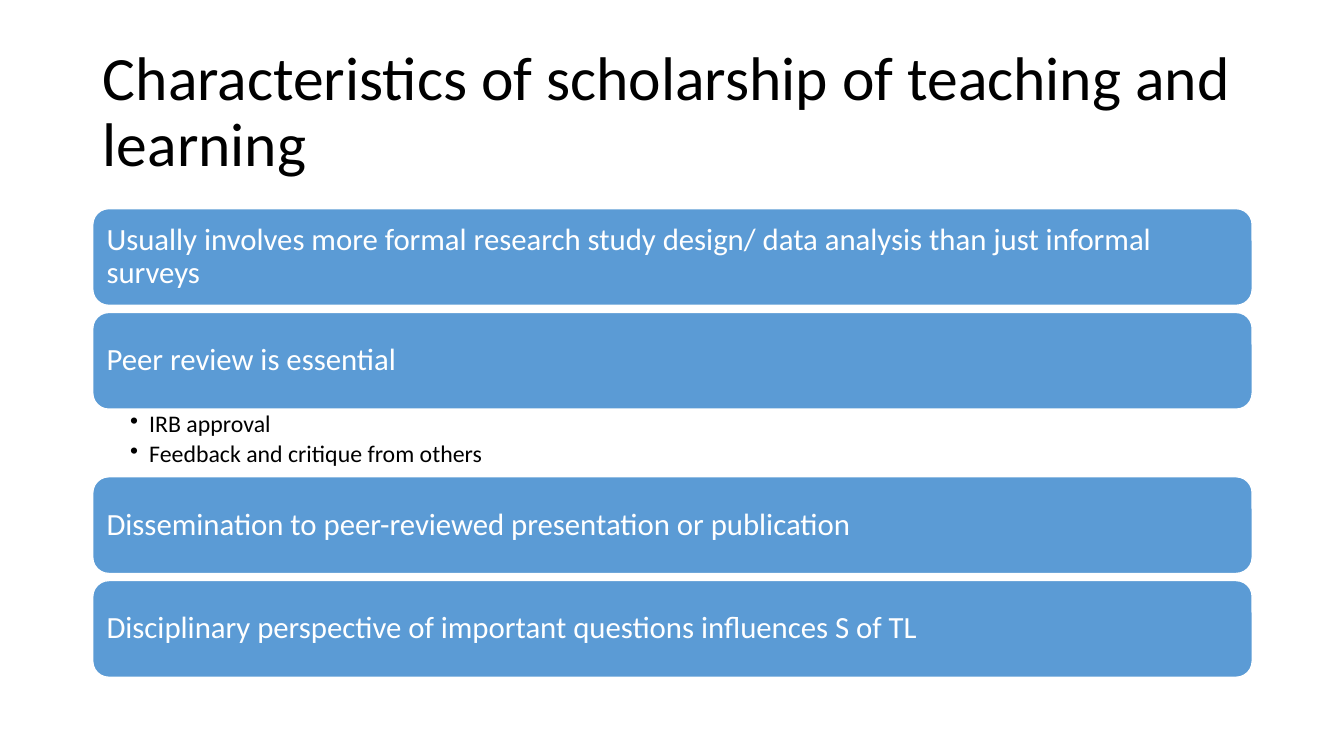
from pptx import Presentation
from pptx.dml.color import RGBColor
from pptx.enum.shapes import MSO_SHAPE
from pptx.enum.text import MSO_ANCHOR, MSO_AUTO_SIZE, PP_ALIGN
from pptx.oxml.ns import qn
from pptx.util import Inches, Pt
from lxml import etree


def rgb(value):
    return RGBColor.from_string(value)


def style(p, size, color):
    p.alignment = PP_ALIGN.LEFT
    p.line_spacing = 0.9
    p.font.name = "Calibri"
    p.font.size = Pt(size)
    p.font.color.rgb = rgb(color)


LEFT, WIDTH = Inches(0.92), Inches(11.5)
BAR_HEIGHT = 0.96
BAR_STEP = 1.03
DETAIL_HEIGHT = 0.65

bars = [
    ("Usually involves more formal research study design/ data analysis than just informal surveys", []),
    ("Peer review is essential", ["IRB approval", "Feedback and critique from others"]),
    ("Dissemination to peer-reviewed presentation or publication", []),
    ("Disciplinary perspective of important questions influences S of TL", []),
]

prs = Presentation()
prs.slide_width = Inches(13.33)
prs.slide_height = Inches(7.5)
s = prs.slides.add_slide(prs.slide_layouts[5])

title = s.shapes.title
title.left, title.top, title.width, title.height = LEFT, Inches(0.4), WIDTH, Inches(1.45)
tf = title.text_frame
tf.text = "Characteristics of scholarship of teaching and learning"
tf.vertical_anchor = MSO_ANCHOR.MIDDLE
tf.auto_size = MSO_AUTO_SIZE.NONE
style(tf.paragraphs[0], 44, "000000")

top = 2.07
for heading, details in bars:
    sp = s.shapes.add_shape(MSO_SHAPE.ROUNDED_RECTANGLE, LEFT, Inches(top), WIDTH, Inches(BAR_HEIGHT))
    sp.shadow.inherit = False
    sp.fill.solid()
    sp.fill.fore_color.rgb = rgb("5B9BD5")
    sp.line.color.rgb = rgb("FFFFFF")
    sp.line.width = Pt(1)
    tf = sp.text_frame
    tf.word_wrap = True
    tf.vertical_anchor = MSO_ANCHOR.MIDDLE
    tf.margin_left = tf.margin_right = tf.margin_top = tf.margin_bottom = Inches(0.09)
    tf.text = heading
    style(tf.paragraphs[0], 22, "FFFFFF")

    if not details:
        top += BAR_STEP
        continue

    top += BAR_HEIGHT
    box = s.shapes.add_textbox(LEFT, Inches(top), WIDTH, Inches(DETAIL_HEIGHT))
    tf = box.text_frame
    tf.word_wrap = True
    tf.margin_left, tf.margin_right = Inches(0.37), Inches(0.17)
    tf.margin_top = tf.margin_bottom = Inches(0.03)
    tf.text = "\n".join(details)
    for p in tf.paragraphs:
        style(p, 17, "000000")
        p.level = 1
        p.space_after = Pt(3)
        pPr = p._p.get_or_add_pPr()
        pPr.set("marL", str(Inches(0.19)))
        pPr.set("indent", str(-Inches(0.19)))
        bullet = etree.Element(qn("a:buChar"), char="•")
        pPr.find(qn("a:defRPr")).addprevious(bullet)
    top += DETAIL_HEIGHT + 0.02

prs.save("out.pptx")
